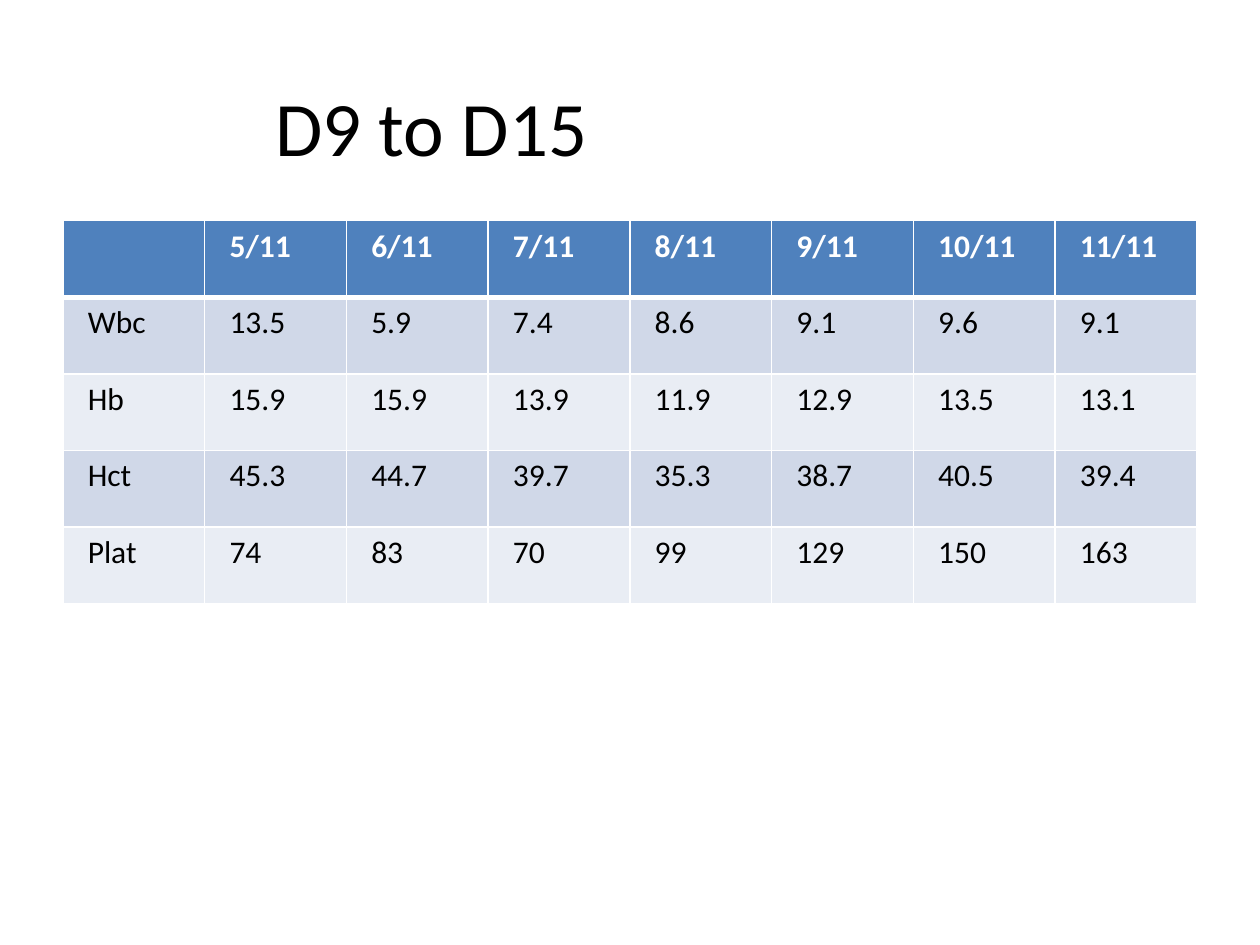
"""Build a slide with a table of daily blood counts."""
from lxml.etree import SubElement
from pptx import Presentation
from pptx.dml.color import RGBColor
from pptx.enum.text import MSO_ANCHOR as Anchor, MSO_AUTO_SIZE as AutoSize, PP_ALIGN as Align
from pptx.oxml.ns import qn
from pptx.util import Cm, Pt

WHITE = RGBColor(0xFF, 0xFF, 0xFF)
BLACK = RGBColor(0, 0, 0)
HEADER_BLUE = RGBColor(0x4F, 0x81, 0xBD)
BANDS = (RGBColor(0xD0, 0xD8, 0xE8), RGBColor(0xE9, 0xED, 0xF4))

BLOOD_COUNTS = (
    ("", "5/11", "6/11", "7/11", "8/11", "9/11", "10/11", "11/11"),
    ("Wbc", "13.5", "5.9", "7.4", "8.6", "9.1", "9.6", "9.1"),
    ("Hb", "15.9", "15.9", "13.9", "11.9", "12.9", "13.5", "13.1"),
    ("Hct", "45.3", "44.7", "39.7", "35.3", "38.7", "40.5", "39.4"),
    ("Plat", "74", "83", "70", "99", "129", "150", "163"),
)


def set_attributes(target, values):
    for name, value in values.items():
        setattr(target, name, value)


class SlideBuilder:
    font_name = "Calibri"
    title_size = Pt(44)
    cell_size = Pt(18)
    cell_format = {
        "margin_left": Cm(0.5), "margin_right": Cm(0.5),
        "margin_top": Cm(0.13), "margin_bottom": Cm(0.13),
        "vertical_anchor": Anchor.TOP,
    }

    def __init__(self, presentation):
        self.slide = presentation.slides.add_slide(presentation.slide_layouts[5])

    def format_text(self, paragraph, size, color, bold=False):
        set_attributes(paragraph.font, {"name": self.font_name, "size": size, "bold": bold})
        paragraph.font.color.rgb = color

    def add_title(self, text, left, top, width, height):
        title = self.slide.shapes.title
        set_attributes(title, {"left": left, "top": top, "width": width, "height": height})
        title.text = text
        set_attributes(title.text_frame, {
            "word_wrap": True, "auto_size": AutoSize.SHAPE_TO_FIT_TEXT,
            "vertical_anchor": Anchor.TOP,
        })
        paragraph = title.text_frame.paragraphs[0]
        paragraph.alignment = Align.LEFT
        self.format_text(paragraph, self.title_size, BLACK)

    def add_border(self, cell, side, width):
        properties = cell._tc.get_or_add_tcPr()
        line = SubElement(properties, qn(f"a:ln{side}"), w=str(Pt(width)))
        fill = SubElement(line, qn("a:solidFill"))
        SubElement(fill, qn("a:srgbClr"), val=str(WHITE))

    def format_cell(self, cell, text, row):
        is_header = row == 0
        widths = {"L": 1, "R": 1, "T": 3 if row == 1 else 1, "B": 3 if is_header else 1}
        for side, width in widths.items():
            self.add_border(cell, side, width)
        cell.fill.solid()
        cell.fill.fore_color.rgb = HEADER_BLUE if is_header else BANDS[(row - 1) % 2]
        set_attributes(cell, self.cell_format)
        cell.text = text
        color = WHITE if is_header else BLACK
        self.format_text(cell.text_frame.paragraphs[0], self.cell_size, color, is_header)

    def add_table(self, rows, left, top, width, height):
        shape = self.slide.shapes.add_table(len(rows), len(rows[0]), left, top, width, height)
        for row, values in enumerate(rows):
            for column, text in enumerate(values):
                self.format_cell(shape.table.cell(row, column), text, row)


def main():
    presentation = Presentation()
    set_attributes(presentation, {"slide_width": Cm(25.4), "slide_height": Cm(19.05)})
    builder = SlideBuilder(presentation)
    builder.add_table(BLOOD_COUNTS, Cm(1.27), Cm(4.45), Cm(22.86), Cm(7.72))
    builder.add_title("D9 to D15", Cm(5.29), Cm(1.48), Cm(14.4), Cm(2.14))
    presentation.save("out.pptx")


if __name__ == "__main__":
    main()
